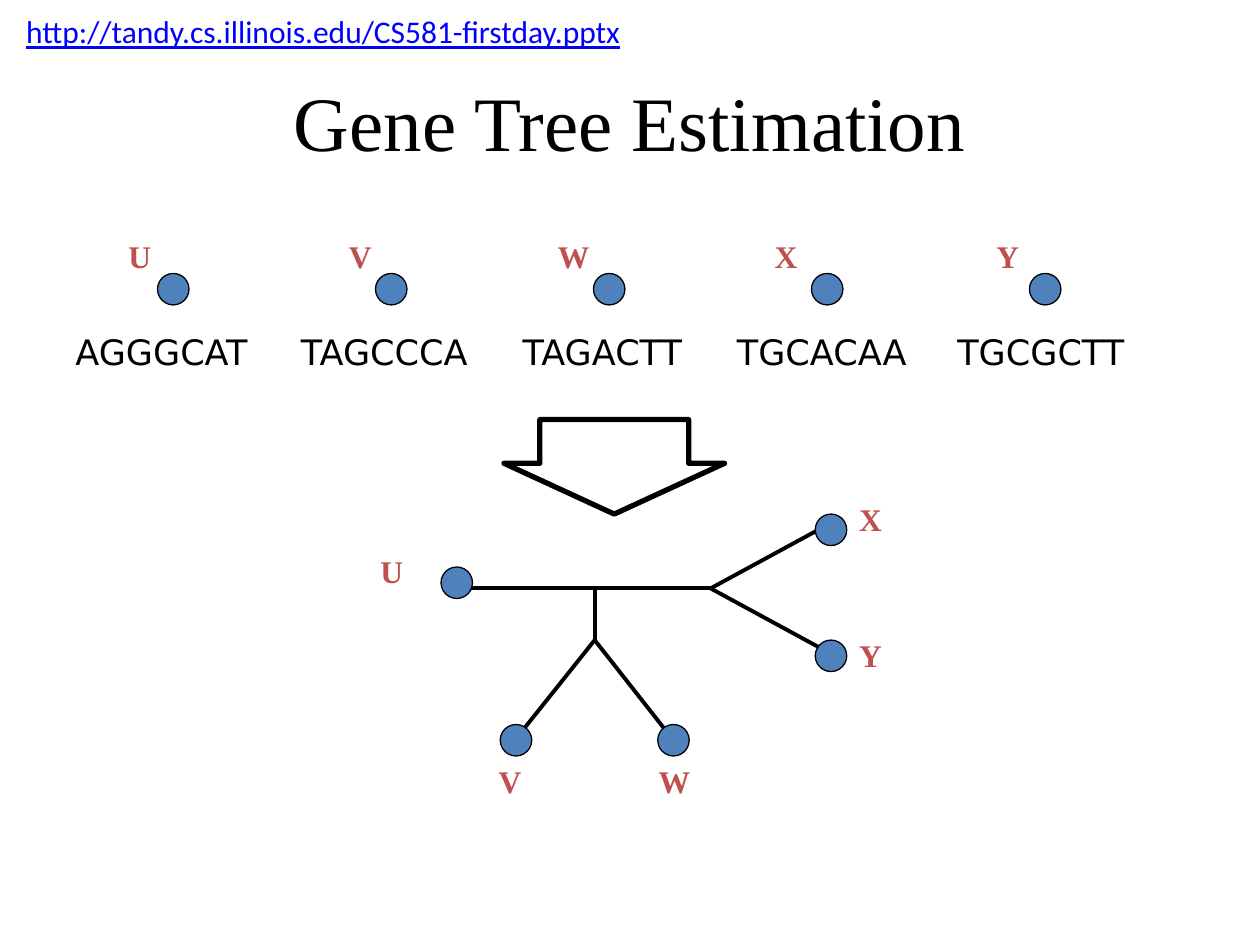
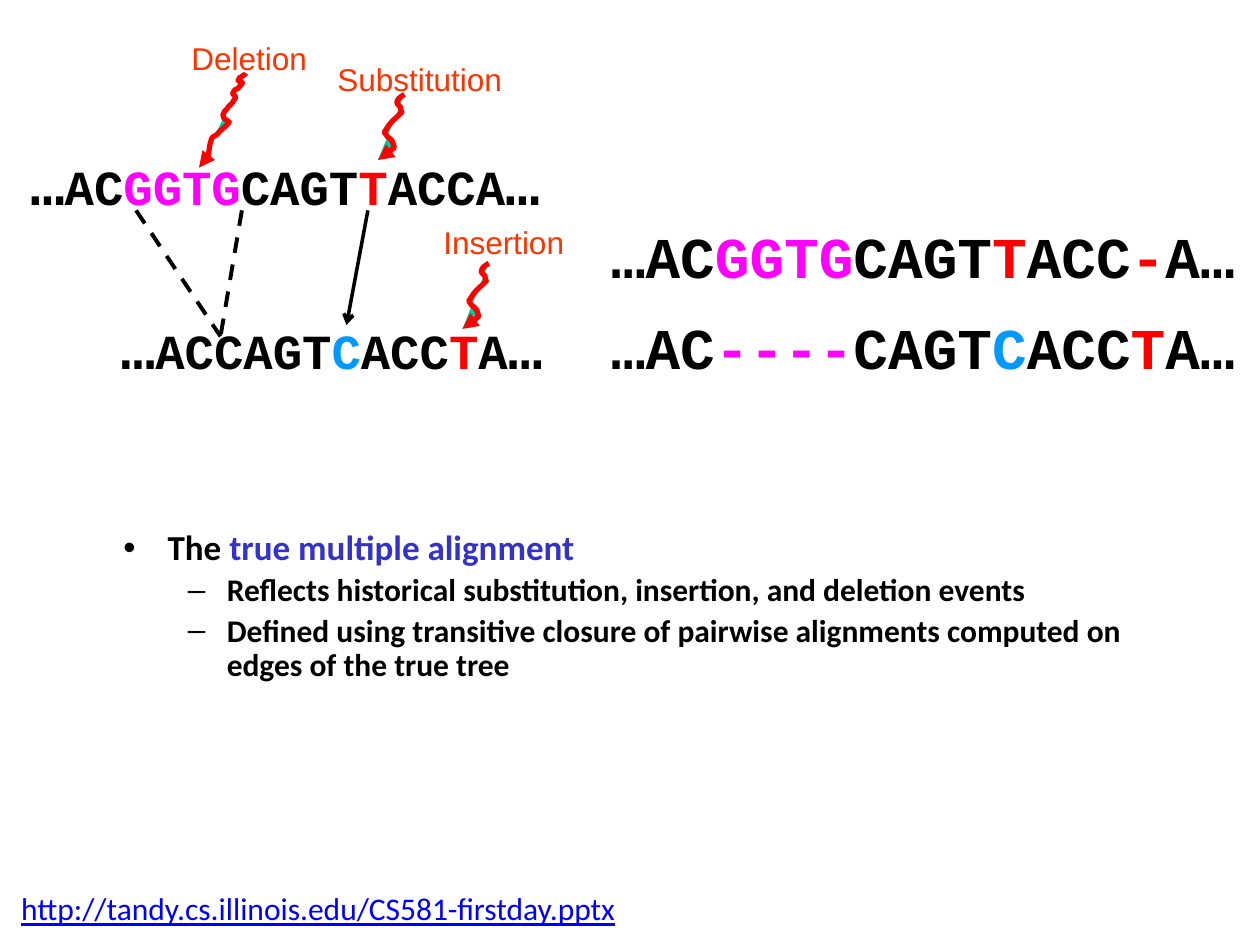
from dataclasses import dataclass

from lxml.etree import SubElement
from pptx import Presentation
from pptx.dml.color import RGBColor
from pptx.enum.dml import MSO_LINE
from pptx.enum.shapes import MSO_CONNECTOR, MSO_SHAPE
from pptx.enum.text import MSO_ANCHOR, PP_ALIGN
from pptx.oxml.ns import qn
from pptx.util import Inches, Pt


@dataclass(frozen=True)
class Theme:
    black: str = "000000"
    node: str = "4F81BD"
    taxon: str = "C0504D"
    link: str = "0000FF"
    deleted: str = "FF00FF"
    changed: str = "FF0000"
    substituted: str = "0099FF"
    event: str = "FF3300"
    squiggle: str = "00CC99"
    term: str = "3333CC"
    serif: str = "Times New Roman"
    sans: str = "Calibri"
    label: str = "Arial"
    letters: str = "DejaVu Sans"
    mono: str = "Courier New"
    title_size: int = 44
    alignment_size: int = 33
    sequence_size: int = 28
    body_size: int = 20
    small_size: int = 18


theme = Theme()


def add_text(slide, box, paragraphs, font, size, bold=False, spacing=None, wrap=False):
    frame = slide.shapes.add_textbox(*map(Inches, box)).text_frame
    frame.word_wrap = wrap
    for index, runs in enumerate(paragraphs):
        paragraph = frame.paragraphs[0] if index == 0 else frame.add_paragraph()
        paragraph.line_spacing = spacing
        for text, color, *own_size in runs:
            run = paragraph.add_run()
            run.text = text
            run.font.name = font
            run.font.size = Pt(own_size[0] if own_size else size)
            run.font.bold = bold
            run.font.color.rgb = RGBColor.from_string(color)
    return frame


def add_line(slide, start, end, width=2.25):
    connector = slide.shapes.add_connector(
        MSO_CONNECTOR.STRAIGHT, *map(Inches, (*start, *end)))
    connector.line.width = Pt(width)
    connector.line.color.rgb = RGBColor.from_string(theme.black)
    SubElement(connector._element.spPr, qn("a:effectLst"))
    return connector


presentation = Presentation()
presentation.slide_width = Inches(10)
presentation.slide_height = Inches(7.5)
tree_slide, alignment_slide = [
    presentation.slides.add_slide(presentation.slide_layouts[6]) for _ in range(2)]

left_fork, right_fork, stem = (4.72, 5.08), (5.64, 4.67), (4.72, 4.67)
branches = [
    ((4.05, 5.92), left_fork), ((5.38, 5.92), left_fork),
    ((5.67, 4.67), (3.67, 4.67)), (stem, left_fork),
    ((6.56, 5.17), right_fork), ((6.56, 4.17), right_fork),
]
for start, end in branches:
    add_line(tree_slide, start, end)

title = add_text(tree_slide, (0.75, 0.33, 8.5, 1.25),
                 [[("Gene Tree Estimation", theme.black)]],
                 theme.serif, theme.title_size, wrap=True)
title.vertical_anchor = MSO_ANCHOR.MIDDLE
title.paragraphs[0].alignment = PP_ALIGN.CENTER

sequences = [
    ("U", 0.92, "AGGGCAT", 0.5, 1.59),
    ("V", 2.67, "TAGCCCA", 2.29, 1.55),
    ("W", 4.33, "TAGACTT", 4.05, 1.5),
    ("X", 6.05, "TGCACAA", 5.75, 1.55),
    ("Y", 7.81, "TGCGCTT", 7.5, 1.53),
]
taxa = [("U", 2.92, 4.33), ("V", 3.86, 6), ("W", 5.13, 6), ("X", 6.72, 3.92), ("Y", 6.72, 5)]
nodes = [(3.5, 4.5), (3.97, 5.75), (5.22, 5.75), (6.47, 5.08), (6.47, 4.08)]
for column, (taxon, taxon_left, sequence, left, width) in enumerate(sequences):
    add_text(tree_slide, (left, 2.57, width, 0.44), [[(sequence, theme.black)]],
             theme.letters, theme.body_size)
    taxa.append((taxon, taxon_left, 1.83))
    nodes.append((1.25 + 1.73 * column, 2.17))

for left, top in nodes:
    node = tree_slide.shapes.add_shape(
        MSO_SHAPE.OVAL, Inches(left), Inches(top), Inches(0.25), Inches(0.25))
    node.shadow.inherit = False
    node.fill.solid()
    node.fill.fore_color.rgb = RGBColor.from_string(theme.node)
    node.line.color.rgb = RGBColor.from_string(theme.black)
    node.line.width = Pt(0.75)

for taxon, left, top in taxa:
    add_text(tree_slide, (left, top, 0.53 if taxon == "W" else 0.44, 0.5),
             [[(taxon, theme.taxon)]], theme.serif, theme.small_size, bold=True)

arrow = tree_slide.shapes.add_shape(
    MSO_SHAPE.DOWN_ARROW, Inches(4), Inches(3.33), Inches(1.75), Inches(0.75))
arrow.adjustments[0] = 0.675
arrow.adjustments[1] = 0.537
arrow.shadow.inherit = False
arrow.fill.background()
arrow.line.color.rgb = RGBColor.from_string(theme.black)
arrow.line.width = Pt(3)

alignment = [
    [("…AC", theme.black), ("GGTG", theme.deleted), ("CAGT", theme.black),
     ("T", theme.changed), ("ACC", theme.black), ("-", theme.changed), ("A…", theme.black)],
    [("…AC", theme.black), ("----", theme.deleted), ("CAGT", theme.black),
     ("C", theme.substituted), ("ACC", theme.black), ("T", theme.changed), ("A…", theme.black)],
]
aligned = add_text(alignment_slide, (4.75, 1.75, 5.25, 1.34), alignment,
                   theme.mono, theme.alignment_size, bold=True, spacing=0.94, wrap=True)
for paragraph in aligned.paragraphs:
    paragraph.space_before = Pt(14.8)

body = add_text(alignment_slide, (0.86, 4.21, 8.05, 1.69), [
    [("The ", theme.black), ("true multiple alignment", theme.term)],
    [("Reflects historical substitution, insertion, and deletion events",
      theme.black, theme.small_size)],
    [("Defined using transitive closure of pairwise alignments computed on edges of the true tree",
      theme.black, theme.small_size)],
], theme.sans, theme.body_size, bold=True, spacing=0.9, wrap=True)
body.margin_left = body.margin_top = body.margin_right = body.margin_bottom = 0
bullets = [("•", 0.47, -0.35, 4)] + [("–", 0.94, -0.31, 3.6)] * 2
for paragraph, (bullet, margin, indent, gap) in zip(body.paragraphs, bullets):
    paragraph.space_before = Pt(gap)
    properties = paragraph._p.get_or_add_pPr()
    properties.set("marL", str(Inches(margin)))
    properties.set("indent", str(Inches(indent)))
    SubElement(properties, qn("a:buFont"), typeface=theme.label)
    SubElement(properties, qn("a:buChar"), char=bullet)

ellipsis = ("…", theme.black, theme.alignment_size)
ancestor = [ellipsis, ("AC", theme.black), ("GGTG", theme.deleted), ("CAGT", theme.black),
            ("T", theme.changed), ("ACCA", theme.black), ellipsis]
descendant = [ellipsis, ("ACCAGT", theme.black), ("C", theme.substituted), ("ACC", theme.black),
              ("T", theme.changed), ("A", theme.black), ellipsis]
for box, runs in [((0.14, 1.17, 4.25, 0.62), ancestor), ((0.86, 2.47, 3.92, 0.62), descendant)]:
    add_text(alignment_slide, box, [runs], theme.mono, theme.sequence_size,
             bold=True, spacing=0.94)

deletion_curve = [
    (1.58, 1.33), (1.59, 1.32), (1.6, 1.32), (1.61, 1.31), (1.63, 1.29), (1.65, 1.26),
    (1.65, 1.26), (1.66, 1.21), (1.66, 1.15), (1.68, 1.1), (1.69, 1.08), (1.71, 1.08),
    (1.72, 1.07), (1.75, 1.03), (1.79, 1.01), (1.82, 0.97), (1.77, 0.93), (1.78, 0.95),
    (1.77, 0.91), (1.78, 0.88), (1.8, 0.87), (1.82, 0.84), (1.84, 0.83), (1.86, 0.79),
    (1.86, 0.79), (1.86, 0.79), (1.87, 0.78), (1.87, 0.77), (1.86, 0.74), (1.83, 0.76),
    (1.86, 0.72), (1.86, 0.71), (1.88, 0.71), (1.89, 0.7), (1.93, 0.65), (1.94, 0.66),
    (1.89, 0.64), (1.91, 0.6), (1.89, 0.63), (1.93, 0.6), (1.94, 0.6), (1.95, 0.58),
    (1.95, 0.58),
]
substitution_curve = [
    (3, 1.27), (3.04, 1.24), (3.09, 1.21), (3.13, 1.17), (3.11, 1.08), (3.09, 1.12),
    (3.05, 1.05), (3.11, 0.95), (3.12, 0.96), (3.19, 0.89), (3.18, 0.88), (3.18, 0.86),
    (3.18, 0.85), (3.17, 0.84), (3.15, 0.83), (3.15, 0.81), (3.15, 0.78), (3.21, 0.75),
    (3.21, 0.75),
]
insertion_curve = [(x + 0.67, y + 1.34) for x, y in substitution_curve]
events = [
    ("Deletion", (1.42, 0.29, 1.12, 0.38), deletion_curve),
    ("Substitution", (2.58, 0.45, 1.51, 0.38), substitution_curve),
    ("Insertion", (3.42, 1.75, 1.16, 0.38), insertion_curve),
]
for name, box, curve in events:
    add_text(alignment_slide, box, [[(name, theme.event)]],
             theme.label, theme.small_size, spacing=0.93)
    points = []
    for first in range(0, len(curve) - 1, 3):
        for t in (0.25, 0.5, 0.75, 1):
            weights = ((1 - t) ** 3, 3 * t * (1 - t) ** 2, 3 * t ** 2 * (1 - t), t ** 3)
            points.append([
                Inches(sum(weight * point[axis]
                           for weight, point in zip(weights, curve[first:first + 4])))
                for axis in (0, 1)])
    builder = alignment_slide.shapes.build_freeform(*map(Inches, curve[0]))
    builder.add_line_segments(points, close=False)
    squiggle = builder.convert_to_shape()
    squiggle.shadow.inherit = False
    squiggle.fill.solid()
    squiggle.fill.fore_color.rgb = RGBColor.from_string(theme.squiggle)
    squiggle.line.color.rgb = RGBColor.from_string(theme.changed)
    squiggle.line.width = Pt(3)
    outline = squiggle.line._get_or_add_ln()
    SubElement(outline, qn("a:round"))
    SubElement(outline, qn("a:headEnd"), type="triangle")

for start in [(1.08, 1.67), (1.92, 1.67)]:
    add_line(alignment_slide, start, (1.75, 2.67)).line.dash_style = MSO_LINE.DASH
substitution_arrow = add_line(alignment_slide, (2.92, 1.67), (2.75, 2.58), width=2)
SubElement(substitution_arrow.line._get_or_add_ln(), qn("a:tailEnd"), type="arrow")

for slide, left, top in [(tree_slide, 0.11, 0.05), (alignment_slide, 0.07, 7.01)]:
    address = add_text(slide, (left, top, 5.03, 0.4),
                       [[("http://tandy.cs.illinois.edu/CS581-firstday.pptx", theme.link)]],
                       theme.sans, theme.small_size)
    address.paragraphs[0].runs[0].font.underline = True

presentation.save("out.pptx")
